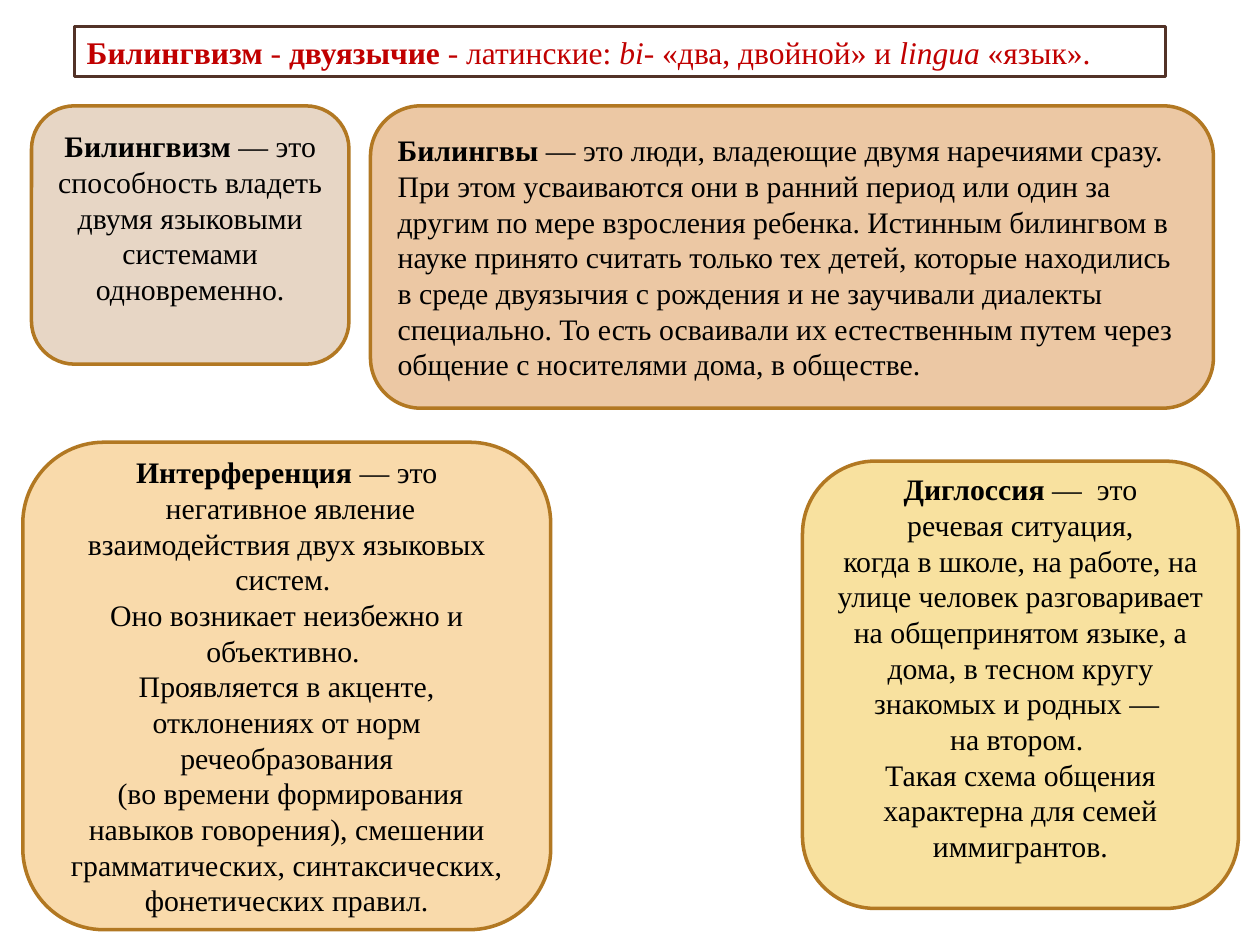
from pptx import Presentation
from pptx.dml.color import RGBColor
from pptx.enum.shapes import MSO_SHAPE
from pptx.enum.text import MSO_ANCHOR, PP_ALIGN
from pptx.util import Pt

THEME = {
    "font": "Times New Roman",
    "title_size": 18, "body_size": 17, "body_leading": 20.4,
    "title_ink": "C00000", "body_ink": "000000",
    "title_line": "523227", "card_line": "B27822",
    "title_weight": 1.5, "card_weight": 2,
    "sand": "E7D6C5", "peach": "ECC8A4", "apricot": "F9DAAB", "straw": "F8E19F",
}
INSET = 3.6

TITLE = {
    "box": (42.5, 15.1, 623.5, 28.8),
    "paragraphs": [[
        ("Билингвизм", "bold"), (" - ", None), ("двуязычие", "bold"),
        (" - латинские: ", None), ("bi-", "italic"),
        (" «два, двойной» и ", None), ("lingua", "italic"), (" «язык».", None),
    ]],
}

CARDS = [
    {"box": (13, 252.7, 301.7, 278.6), "fill": "apricot", "align": PP_ALIGN.CENTER, "raise": 0,
     "paragraphs": [
         [("Интерференция", "bold"), (" — это", None)],
         [(" негативное явление взаимодействия двух языковых систем. ", None)],
         [("Оно возникает неизбежно и объективно. ", None)],
         [("Проявляется в акценте, отклонениях от норм речеобразования", None)],
         [(" (во времени формирования навыков говорения), смешении грамматических, "
           "синтаксических, фонетических правил.", None)],
     ]},
    {"box": (18, 60.5, 181.4, 147.6), "fill": "sand", "align": PP_ALIGN.CENTER, "raise": 20,
     "paragraphs": [
         [("Билингвизм", "bold"),
          (" — это способность владеть двумя языковыми системами одновременно.", None)],
     ]},
    {"box": (211.7, 60.5, 481.7, 172.8), "fill": "peach", "align": PP_ALIGN.LEFT, "raise": 0,
     "paragraphs": [
         [("Билингвы", "bold"),
          (" — это люди, владеющие двумя наречиями сразу. При этом усваиваются они в ранний "
           "период или один за другим по мере взросления ребенка. Истинным билингвом в науке "
           "принято считать только тех детей, которые находились в среде двуязычия с рождения "
           "и не заучивали диалекты специально. То есть осваивали их естественным путем через "
           "общение с носителями дома, в обществе.", None)],
     ]},
    {"box": (458.6, 263.5, 249.1, 255.6), "fill": "straw", "align": PP_ALIGN.CENTER, "raise": 20,
     "paragraphs": [
         [("Диглоссия", "bold"), (" —  это", None)],
         [(" речевая ситуация, ", None)],
         [("когда в школе, на работе, на улице человек разговаривает на общепринятом языке, "
           "а дома, в тесном кругу знакомых и родных — ", None)],
         [("на втором. ", None)],
         [("Такая схема общения характерна для семей иммигрантов.", None)],
     ]},
]


def apply(target, values):
    for name, value in values.items():
        setattr(target, name, value)


def add_panel(slide, outline, box, role, fill=None):
    panel = slide.shapes.add_shape(outline, *map(Pt, box))
    panel.shadow.inherit = False
    if fill:
        panel.fill.solid()
        panel.fill.fore_color.rgb = RGBColor.from_string(THEME[fill])
    else:
        panel.fill.background()
    panel.line.color.rgb = RGBColor.from_string(THEME[role + "_line"])
    panel.line.width = Pt(THEME[role + "_weight"])
    return panel


def write(frame, paragraphs, role, layout):
    for index, phrases in enumerate(paragraphs):
        paragraph = frame.add_paragraph() if index else frame.paragraphs[0]
        apply(paragraph, layout)
        for wording, emphasis in phrases:
            phrase = paragraph.add_run()
            phrase.text = wording
            apply(phrase.font, {"name": THEME["font"], "size": Pt(THEME[role + "_size"]),
                                "bold": emphasis == "bold", "italic": emphasis == "italic"})
            phrase.font.color.rgb = RGBColor.from_string(THEME[role + "_ink"])


def main():
    """Build the slide of bilingualism definitions."""
    deck = Presentation()
    apply(deck, {"slide_width": Pt(720), "slide_height": Pt(540)})
    slide = deck.slides.add_slide(deck.slide_layouts[6])

    title = add_panel(slide, MSO_SHAPE.RECTANGLE, TITLE["box"], "title")
    apply(title.text_frame, {"word_wrap": True, "vertical_anchor": MSO_ANCHOR.MIDDLE})
    write(title.text_frame, TITLE["paragraphs"], "title", {"alignment": PP_ALIGN.LEFT})

    for card in CARDS:
        panel = add_panel(slide, MSO_SHAPE.ROUNDED_RECTANGLE, card["box"], "card", card["fill"])
        apply(panel.text_frame, {"word_wrap": True, "vertical_anchor": MSO_ANCHOR.MIDDLE,
                                 "margin_bottom": Pt(INSET + card["raise"])})
        write(panel.text_frame, card["paragraphs"], "body",
              {"alignment": card["align"], "line_spacing": Pt(THEME["body_leading"])})

    deck.save("out.pptx")


if __name__ == "__main__":
    main()
